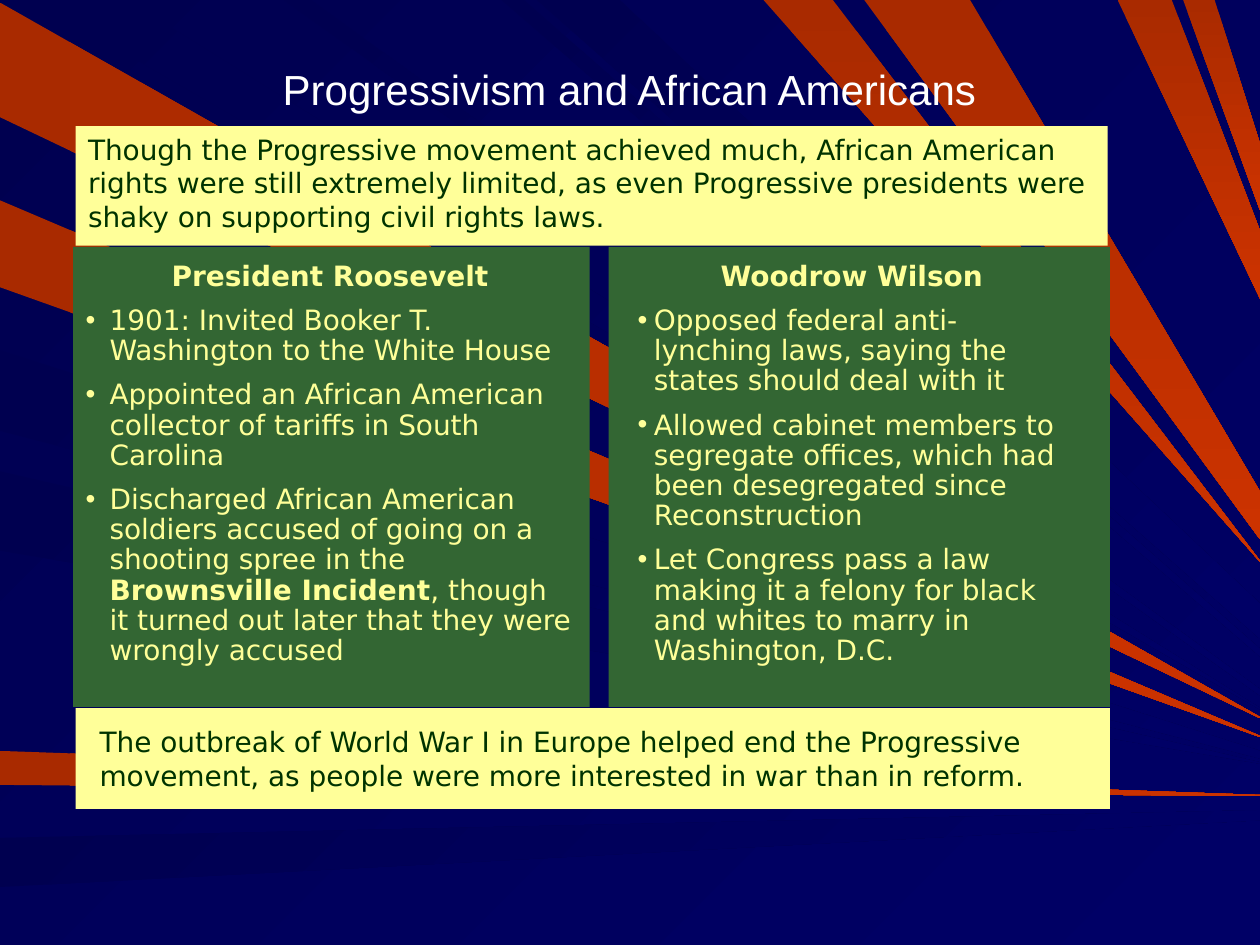
from lxml.etree import SubElement
from pptx import Presentation
from pptx.dml.color import RGBColor
from pptx.enum.shapes import MSO_SHAPE
from pptx.enum.text import MSO_ANCHOR, MSO_AUTO_SIZE, PP_ALIGN
from pptx.oxml.ns import qn
from pptx.util import Inches, Pt

COLORS = {
    "night": "000050", "navy": "000066", "ember": "A92A00", "flame": "CC3300",
    "panel": "336633", "note": "FFFF99", "ink": "003300", "white": "FFFFFF",
}


def paint_gradient(fill, start, end, angle):
    fill.gradient()
    fill.gradient_angle = (360 - angle) % 360
    for stop, color in zip(fill.gradient_stops, (start, end)):
        stop.color.rgb = RGBColor.from_string(COLORS[color])


def add_text(para, text, font="DejaVu Sans", size=16, color="ink", bold=False,
             align=PP_ALIGN.LEFT):
    para.alignment = align
    span = para.add_run()
    span.text = text
    span.font.name = font
    span.font.size = Pt(size)
    span.font.bold = bold
    span.font.color.rgb = RGBColor.from_string(COLORS[color])


deck = Presentation()
deck.slide_width, deck.slide_height = Inches(10), Inches(7.5)
page = deck.slides.add_slide(deck.slide_layouts[3])
for footer in [box for box in page.placeholders if box.placeholder_format.idx > 2]:
    footer.element.getparent().remove(footer.element)
paint_gradient(page.background.fill, "night", "navy", 45)

rays = [
    ("left", "flame", 0.02, 0.93, 5.69, 5.7),
    ("top", "navy", 0.26, 1.01, 5.62, 5.63),
    ("left", "flame", 5.96, 6.23, 6.31, 6.32),
    ("left", "navy", 6.65, 7.04, 6.43, 6.51),
    ("left", "flame", 1.59, 2.28, 5.84, 5.85),
    ("top", "navy", 3.98, 4.16, 5.15, 5.21),
    ("top", "navy", 4.26, 4.92, 4.79, 5.07),
    ("top", "flame", 6.06, 6.61, 4.45, 4.46),
    ("top", "flame", 8.87, 9.3, 1.83, 2.37),
    ("top", "flame", 9.39, 9.64, 1.14, 1.67),
    ("left", "navy", 2.78, 3.42, 5.96, 6.02),
    ("left", "navy", 3.74, 4.37, 6.05, 6.06),
    ("top", "navy", 2.25, 2.47, 5.47, 5.52),
    ("top", "flame", 6.86, 7.7, 3.9, 4.28),
]
for edge, color, near, far, high, low in rays:
    if edge == "top":
        points = [(near, 0), (far, 0), (10, high), (10, low)]
    else:
        points = [(0, far), (0, near), (10, high), (10, low)]
    corners = [(Inches(x), Inches(y)) for x, y in points]
    builder = page.shapes.build_freeform(*corners[0])
    builder.add_line_segments(corners[1:], close=True)
    ray = builder.convert_to_shape()
    ray.shadow.inherit = False
    ray.line.fill.background()
    if color == "navy":
        paint_gradient(ray.fill, "night", "navy", 45)
    else:
        paint_gradient(ray.fill, "ember", "flame", 90 if edge == "top" else 0)

panels = [
    (4.83, 1.96, 3.98, 3.65, "panel", ""),
    (0.6, 1, 8.19, 0.95, "note",
     "Though the Progressive movement achieved much, African American rights were still "
     "extremely limited, as even Progressive presidents were shaky on supporting civil rights laws."),
    (0.58, 1.96, 4.1, 3.65, "panel", ""),
    (0.6, 5.62, 8.21, 0.8, "note",
     "The outbreak of World War I in Europe helped end the Progressive movement, "
     "as people were more interested in war than in reform."),
]
for left, top, width, height, color, text in panels:
    panel = page.shapes.add_shape(MSO_SHAPE.RECTANGLE, Inches(left), Inches(top),
                                  Inches(width), Inches(height))
    panel.shadow.inherit = False
    panel.fill.solid()
    panel.fill.fore_color.rgb = RGBColor.from_string(COLORS[color])
    panel.line.fill.background()
    if text:
        frame = panel.text_frame
        frame.word_wrap = True
        frame.vertical_anchor = MSO_ANCHOR.TOP if top == 1 else MSO_ANCHOR.MIDDLE
        frame.margin_left = Inches(0.1 if top == 1 else 0.19)
        add_text(frame.paragraphs[0], text)

title = page.shapes.title
title.left, title.top, title.width, title.height = map(Inches, (0.58, 0.4, 8.83, 0.61))
title.text_frame.vertical_anchor = MSO_ANCHOR.MIDDLE
add_text(title.text_frame.paragraphs[0], "Progressivism and African Americans",
         font="Arial", size=24, color="white", align=PP_ALIGN.CENTER)
title.element.getparent().append(title.element)

presidents = [
    (1, (0.58, 2.03, 4.08, 3.42), 0.19, "President Roosevelt", [
        ["1901: Invited Booker T. Washington to the White House"],
        ["Appointed an African American collector of tariffs in South Carolina"],
        ["Discharged African American soldiers accused of going on a shooting spree in the ",
         "Brownsville Incident", ", though it turned out later that they were wrongly accused"],
    ]),
    (2, (4.96, 2.03, 3.6, 3.4), 0.13, "Woodrow Wilson", [
        ["Opposed federal anti-lynching laws, saying the states should deal with it"],
        ["Allowed cabinet members to segregate offices, which had been desegregated "
         "since Reconstruction"],
        ["Let Congress pass a law making it a felony for black and whites to marry "
         "in Washington, D.C."],
    ]),
]
for index, place, indent, name, facts in presidents:
    box = page.placeholders[index]
    box.left, box.top, box.width, box.height = map(Inches, place)
    box.element.getparent().append(box.element)
    frame = box.text_frame
    frame.word_wrap = True
    frame.auto_size = MSO_AUTO_SIZE.NONE
    for row, parts in enumerate([[name], *facts]):
        para = frame.add_paragraph() if row else frame.paragraphs[0]
        properties = para._p.get_or_add_pPr()
        properties.set("marL", str(Inches(indent)))
        properties.set("indent", str(-Inches(indent)))
        if row:
            SubElement(properties, qn("a:buChar")).set("char", "•")
        else:
            SubElement(properties, qn("a:buNone"))
        para.line_spacing = 0.9
        para.space_before = Pt(8 if row else 0)
        for order, text in enumerate(parts):
            add_text(para, text, color="note", bold=row == 0 or order == 1,
                     align=PP_ALIGN.LEFT if row else PP_ALIGN.CENTER)

deck.save("out.pptx")
